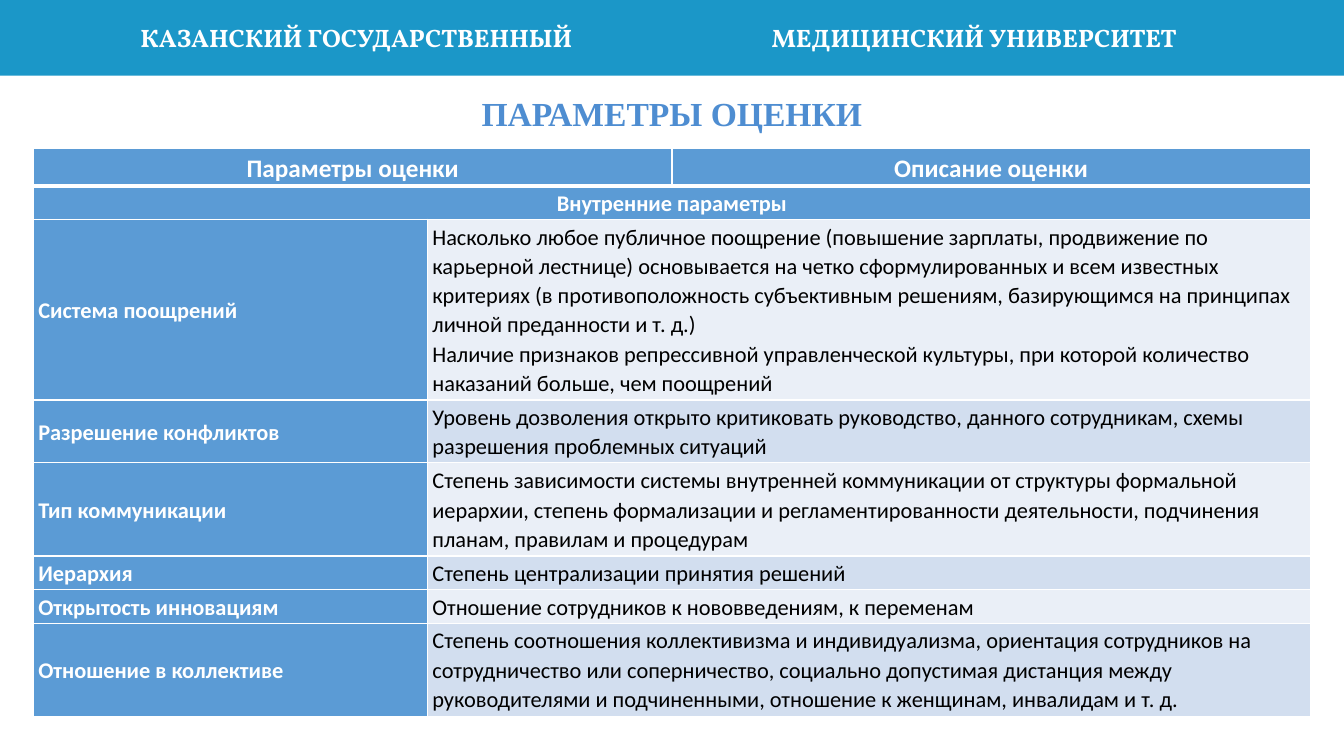
from lxml import etree
from pptx import Presentation
from pptx.dml.color import RGBColor
from pptx.enum import shapes, text
from pptx.oxml import ns
from pptx.util import Pt

BAND = RGBColor(0x1B, 0x97, 0xC8)
WHITE = RGBColor(0xFF, 0xFF, 0xFF)
BLACK = RGBColor(0, 0, 0)
TITLE = RGBColor(0x4E, 0x8D, 0xD1)
HEADER = RGBColor(0x5B, 0x9B, 0xD5)
STRIPES = [RGBColor(0xEA, 0xEF, 0xF7), RGBColor(0xD2, 0xDE, 0xEF)]
LEFT, CENTER, RIGHT = text.PP_ALIGN.LEFT, text.PP_ALIGN.CENTER, text.PP_ALIGN.RIGHT


def style(p, font, size, color, bold, align):
    p.alignment = align
    p.font.name = font
    p.font.size = Pt(size)
    p.font.color.rgb = color
    p.font.bold = bold


def border(cell, side, width):
    ln = etree.SubElement(cell._tc.get_or_add_tcPr(), ns.qn(f"a:ln{side}"), w=str(Pt(width)))
    fill = etree.SubElement(ln, ns.qn("a:solidFill"))
    etree.SubElement(fill, ns.qn("a:srgbClr"), val=str(WHITE))


prs = Presentation()
prs.slide_width, prs.slide_height = Pt(960), Pt(540)
s = prs.slides.add_slide(prs.slide_layouts[6])

band = s.shapes.add_shape(shapes.MSO_SHAPE.RECTANGLE, 0, 0, Pt(960), Pt(54))
band.shadow.inherit = False
band.fill.solid()
band.fill.fore_color.rgb = BAND
band.line.fill.background()

captions = [
    ("КАЗАНСКИЙ ГОСУДАРСТВЕННЫЙ", 66, 12.5, 350, 29, "Vollkorn", 18, WHITE, RIGHT),
    ("МЕДИЦИНСКИЙ УНИВЕРСИТЕТ", 544, 12.5, 350, 29, "Vollkorn", 18, WHITE, LEFT),
    ("ПАРАМЕТРЫ ОЦЕНКИ", 66, 29, 828, 104, "Times New Roman", 24, TITLE, CENTER),
]
for words, x, y, w, h, font, size, color, align in captions:
    tf = s.shapes.add_textbox(Pt(x), Pt(y), Pt(w), Pt(h)).text_frame
    tf.word_wrap = True
    tf.vertical_anchor = text.MSO_ANCHOR.MIDDLE
    p = tf.paragraphs[0]
    p.text = words
    style(p, font, size, color, True, align)

rows = [
    (26.5, "Параметры оценки", "", "Описание оценки"),
    (24, "Внутренние параметры", "", ""),
    (129, "Система поощрений",
     "Насколько любое публичное поощрение (повышение зарплаты, продвижение по карьерной лестнице) "
     "основывается на четко сформулированных и всем известных критериях (в противоположность "
     "субъективным решениям, базирующимся на принципах личной преданности и т. д.)\n"
     "Наличие признаков репрессивной управленческой культуры, при которой количество наказаний "
     "больше, чем поощрений", ""),
    (45, "Разрешение конфликтов",
     "Уровень дозволения открыто критиковать руководство, данного сотрудникам, схемы разрешения "
     "проблемных ситуаций", ""),
    (66.5, "Тип коммуникации",
     "Степень зависимости системы внутренней коммуникации от структуры формальной иерархии, "
     "степень формализации и регламентированности деятельности, подчинения планам, правилам "
     "и процедурам", ""),
    (24, "Иерархия", "Степень централизации принятия решений", ""),
    (24, "Открытость инновациям", "Отношение сотрудников к нововведениям, к переменам", ""),
    (66.5, "Отношение в коллективе",
     "Степень соотношения коллективизма и индивидуализма, ориентация сотрудников на "
     "сотрудничество или соперничество, социально допустимая дистанция между руководителями "
     "и подчиненными, отношение к женщинам, инвалидам и т. д.", ""),
]
height = sum(row[0] for row in rows)
table = s.shapes.add_table(len(rows), 3, Pt(24), Pt(106.2), Pt(912), Pt(height)).table
for column, width in zip(table.columns, (281.5, 174.5, 456)):
    column.width = Pt(width)
table.cell(0, 0).merge(table.cell(0, 1))
table.cell(1, 0).merge(table.cell(1, 2))
for i in range(2, len(rows)):
    table.cell(i, 1).merge(table.cell(i, 2))

for i, (row_height, *words) in enumerate(rows):
    table.rows[i].height = Pt(row_height)
    for j, value in enumerate(words):
        cell = table.cell(i, j)
        if cell.is_spanned:
            continue
        heading = i < 2 or j == 0
        for side in "LRTB":
            thick = (i, side) in ((0, "B"), (1, "T"))
            border(cell, side, 3 if thick else 1)
        cell.fill.solid()
        cell.fill.fore_color.rgb = HEADER if heading else STRIPES[i % 2]
        cell.vertical_anchor = text.MSO_ANCHOR.MIDDLE
        cell.margin_left = cell.margin_right = Pt(3.4)
        cell.margin_top = cell.margin_bottom = Pt(1.7)
        cell.text = value
        for p in cell.text_frame.paragraphs:
            p.line_spacing = 1.07
            p.space_after = Pt(0 if "\n" in value else 8)
            style(p, "Calibri", 18 if i == 0 else 16, WHITE if heading else BLACK,
                  heading, CENTER if i < 2 else LEFT)

prs.save("out.pptx")
